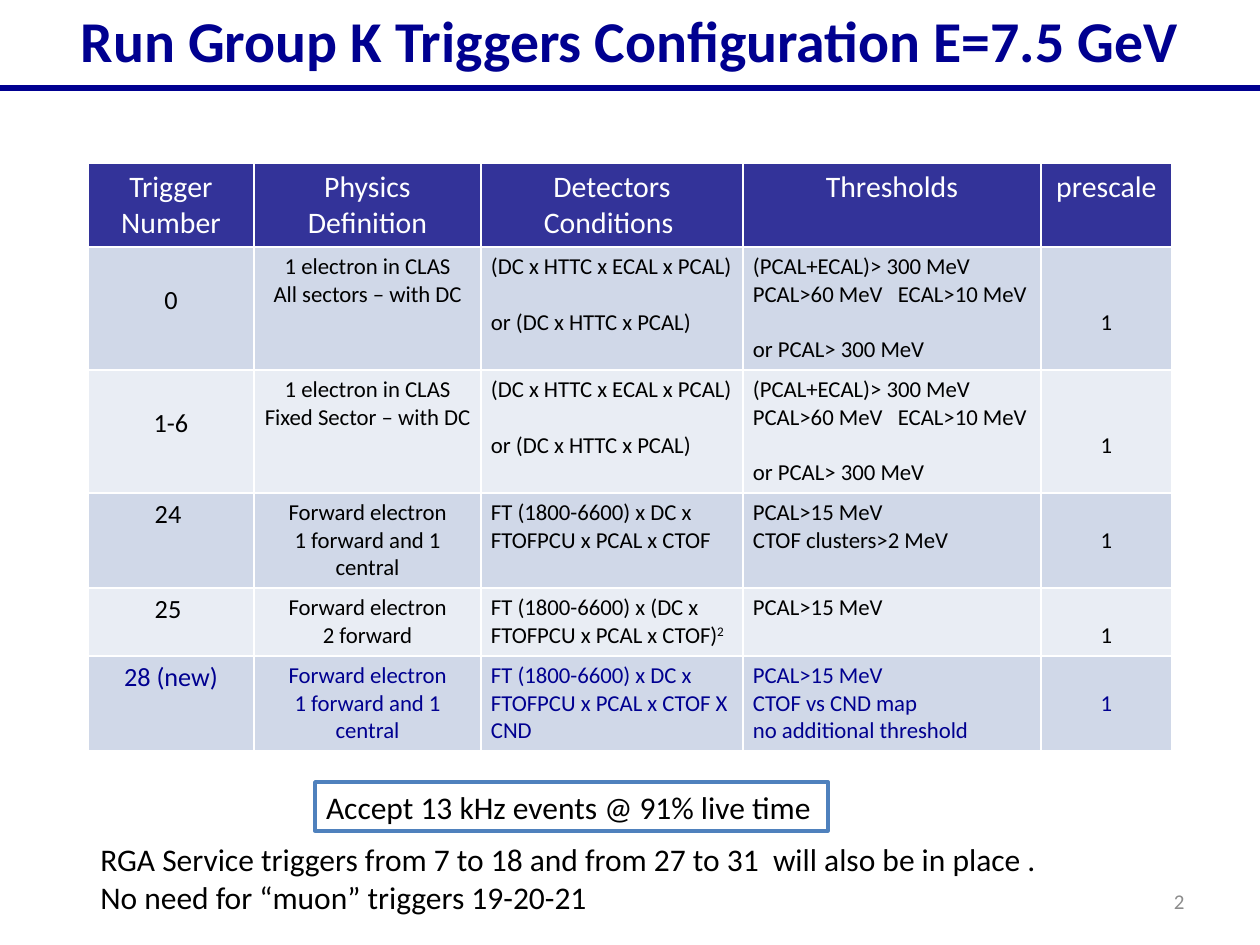
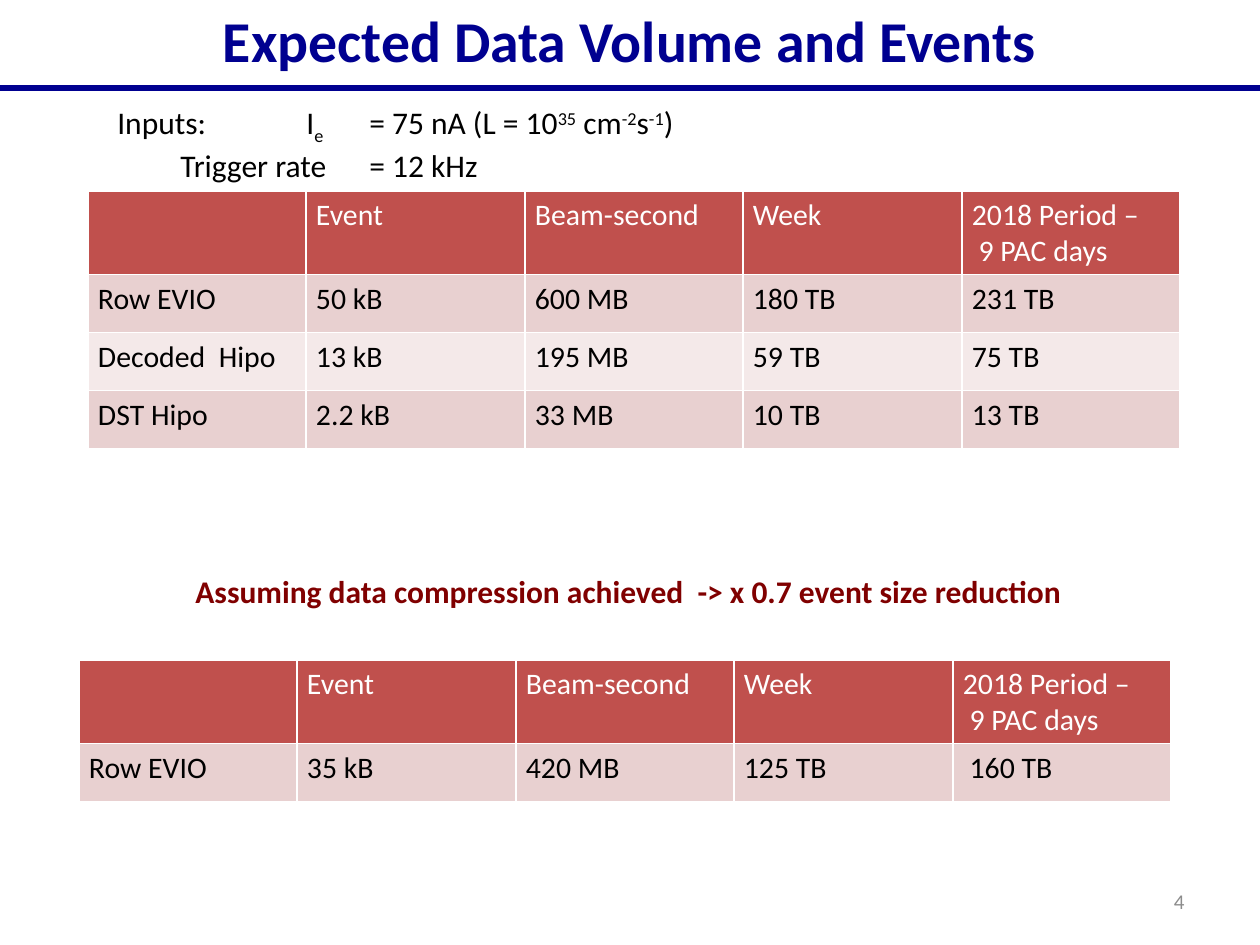
from dataclasses import dataclass
from typing import NamedTuple, Sequence, Union

from lxml.etree import SubElement
from pptx import Presentation
from pptx.dml.color import RGBColor
from pptx.enum.shapes import MSO_CONNECTOR, MSO_SHAPE
from pptx.enum.text import MSO_ANCHOR, MSO_AUTO_SIZE, PP_ALIGN
from pptx.oxml.ns import qn
from pptx.util import Emu, Pt

LEFT, MID, RIGHT = PP_ALIGN.LEFT, PP_ALIGN.CENTER, PP_ALIGN.RIGHT
SCALE = 914400 / 126
LINE = 1.22  # line height of the font, in ems


@dataclass(frozen=True)
class Theme:
    font: str = "Calibri"
    navy: str = "000090"
    black: str = "000000"
    white: str = "FFFFFF"
    grey: str = "8C8C8C"
    maroon: str = "800000"
    frame: str = "4F81BD"
    title: int = 33
    text: int = 18
    head: int = 17
    key: int = 15
    cell: int = 13
    page: int = 12


THEME = Theme()


class Box(NamedTuple):
    left: int
    top: int
    width: int
    height: int


class Style(NamedTuple):
    size: int
    color: str = THEME.black
    align: PP_ALIGN = LEFT
    bold: bool = False


class Piece(NamedTuple):
    text: str
    base: int = 0  # percent of raise (+) or drop (-)


Line = Union[str, Sequence[Piece]]


class Cell(NamedTuple):
    lines: Sequence[Line]
    style: Style
    lead: int = 0  # empty lines above the text
    split: bool = False  # one line of space before the last line


class Bands(NamedTuple):
    head: str
    odd: str
    even: str


class Trigger(NamedTuple):
    name: str
    physics: Sequence[str]
    logic: Sequence[Line]
    limits: Sequence[str]
    color: str = THEME.black
    tall: bool = False


BLUE = Bands("333399", "D0D8E8", "E9EDF4")
RED = Bands("C0504D", "E8D0D0", "F4E9E9")


def px(count: int) -> Emu:
    return Emu(round(count * SCALE))


def place(box: Box) -> list[Emu]:
    return [px(side) for side in box]


def rgb(color: str) -> RGBColor:
    return RGBColor.from_string(color)


def write(frame, lines: Sequence[Line], style: Style) -> None:
    """Fill a text frame with one paragraph per line."""
    for index, line in enumerate(lines):
        para = frame.add_paragraph() if index else frame.paragraphs[0]
        para.alignment = style.align
        if isinstance(line, str):
            para.text = line
        else:
            for piece in line:
                run = para.add_run()
                run.text = piece.text
                if piece.base:
                    run._r.get_or_add_rPr().set("baseline", str(piece.base * 1000))
        for run in para.runs:
            font = run.font
            font.name, font.size, font.bold = THEME.font, Pt(style.size), style.bold
            font.color.rgb = rgb(style.color)


def label(slide, box: Box, lines: Sequence[Line], style: Style):
    shape = slide.shapes.add_textbox(*place(box))
    shape.text_frame.word_wrap = True
    write(shape.text_frame, lines, style)
    return shape.text_frame


def start(deck, title: str, page: str):
    """Add a slide with its title, rule and page number."""
    slide = deck.slides.add_slide(deck.slide_layouts[5])
    rule = slide.shapes.add_connector(MSO_CONNECTOR.STRAIGHT, *place(Box(0, 88, 1260, 88)))
    rule.line.color.rgb = rgb(THEME.navy)
    rule.line.width = Pt(3)
    SubElement(rule._element.spPr, qn("a:effectLst"))

    head = slide.shapes.title
    head.left, head.top, head.width, head.height = place(Box(18, 0, 1223, 100))
    frame = head.text_frame
    frame.auto_size = MSO_AUTO_SIZE.NONE
    frame.vertical_anchor = MSO_ANCHOR.TOP
    frame.margin_top = px(5)
    write(frame, [title], Style(THEME.title, THEME.navy, MID, True))

    foot = label(slide, Box(903, 876, 294, 50), [page], Style(THEME.page, THEME.grey, RIGHT))
    foot.vertical_anchor = MSO_ANCHOR.MIDDLE
    return slide


def edge(cell) -> None:
    """Give a cell thin white borders, ahead of its fill."""
    props = cell._tc.get_or_add_tcPr()
    for index, side in enumerate(("lnL", "lnR", "lnT", "lnB")):
        line = SubElement(props, qn(f"a:{side}"), w=str(Pt(1)))
        fill = SubElement(line, qn("a:solidFill"))
        SubElement(fill, qn("a:srgbClr"), val=THEME.white)
        props.insert(index, line)


def grid(slide, spot: tuple[int, int], cols: Sequence[int], rows: Sequence[int],
         cells: Sequence[Sequence[Cell]], bands: Bands) -> None:
    box = Box(*spot, sum(cols), sum(rows))
    table = slide.shapes.add_table(len(rows), len(cols), *place(box)).table
    for col, width in zip(table.columns, cols):
        col.width = px(width)
    for row, height in zip(table.rows, rows):
        row.height = px(height)
    for y, line in enumerate(cells):
        shade = bands.head if y == 0 else bands.odd if y % 2 else bands.even
        for x, item in enumerate(line):
            cell = table.cell(y, x)
            edge(cell)
            cell.fill.solid()
            cell.fill.fore_color.rgb = rgb(shade)
            write(cell.text_frame, item.lines, item.style)
            space = Pt(item.style.size * LINE)
            cell.margin_left = cell.margin_right = px(10)
            cell.margin_top = px(6) + item.lead * space
            if item.split:
                cell.text_frame.paragraphs[-1].space_before = space


def heads(names: Sequence[Sequence[str]], align: PP_ALIGN) -> list[Cell]:
    return [Cell(name, Style(THEME.head, THEME.white, align)) for name in names]


def cells(trig: Trigger) -> list[Cell]:
    mid = Style(THEME.cell, trig.color, MID)
    side = Style(THEME.cell, trig.color)
    return [
        Cell([trig.name], Style(THEME.key, trig.color, MID), int(trig.tall)),
        Cell(trig.physics, mid),
        Cell(trig.logic, side, split=trig.tall),
        Cell(trig.limits, side, split=trig.tall),
        Cell(["1"], mid, 1 + trig.tall),
    ]


# Trigger table
TRIGHEADS = [["Trigger Number"], ["Physics", "Definition"],
             ["Detectors", "Conditions "], ["Thresholds"], ["prescale"]]
LOGIC = ["(DC x HTTC x ECAL x PCAL)", "or (DC x HTTC x PCAL)"]
LIMITS = ["(PCAL+ECAL)> 300 MeV", "PCAL>60 MeV   ECAL>10 MeV", "or PCAL> 300 MeV"]
PAIR = ["Forward electron", "1 forward and 1 central"]
TRIGGERS = [
    Trigger("0", ["1 electron in CLAS", "All sectors – with DC"], LOGIC, LIMITS, tall=True),
    Trigger("1-6", ["1 electron in CLAS", "Fixed Sector – with DC"], LOGIC, LIMITS, tall=True),
    Trigger("24 ", PAIR, ["FT (1800-6600) x DC x FTOFPCU x PCAL x CTOF"],
            ["PCAL>15 MeV", "CTOF clusters>2 MeV"]),
    Trigger("25 ", ["Forward electron", "2 forward"],
            [[Piece("FT (1800-6600) x (DC x FTOFPCU x PCAL x CTOF)"), Piece("2", 30)]],
            ["PCAL>15 MeV"]),
    Trigger("28 (new)", PAIR, ["FT (1800-6600) x DC x FTOFPCU x PCAL x CTOF X CND"],
            ["PCAL>15 MeV", "CTOF vs CND map", "no additional threshold"], THEME.navy),
]

# Data volume tables
SIZEHEADS = [[""], ["Event"], ["Beam-second"], ["Week"], ["2018 Period –", " 9 PAC days"]]
RAW = [
    ["Row EVIO", "50 kB", "600 MB", "180 TB", "231 TB"],
    ["Decoded  Hipo", "13 kB", "195 MB", "59 TB", "75 TB"],
    ["DST Hipo", "2.2 kB", "33 MB", "10 TB", "13 TB"],
]
PACKED = [["Row EVIO", "35 kB", "420 MB", "125 TB", " 160 TB"]]
INPUTS = [
    [Piece("Inputs:  \t\tI"), Piece("e  ", -25), Piece("\t= 75 nA (L = 10"), Piece("35", 30),
     Piece(" cm"), Piece("-2", 30), Piece("s"), Piece("-1", 30), Piece(")")],
    "\tTrigger rate\t= 12 kHz",
]


def sizes(slide, spot: tuple[int, int], data: Sequence[Sequence[str]]) -> None:
    body = [[Cell([value], Style(THEME.head)) for value in row] for row in data]
    grid(slide, spot, [218, 219, 218, 219, 218], [83] + [58] * len(data),
         [heads(SIZEHEADS, LEFT)] + body, RED)


def tabs(frame, step: int, count: int) -> None:
    """Set evenly spaced tab stops in every paragraph."""
    for para in frame.paragraphs:
        stops = SubElement(para._p.get_or_add_pPr(), qn("a:tabLst"))
        for index in range(1, count + 1):
            SubElement(stops, qn("a:tab"), pos=str(px(step * index)), algn="l")


def accept(slide, text: str) -> None:
    """Draw the framed rate statement."""
    shape = slide.shapes.add_shape(MSO_SHAPE.RECTANGLE, *place(Box(315, 782, 513, 49)))
    shape.shadow.inherit = False
    shape.fill.solid()
    shape.fill.fore_color.rgb = rgb(THEME.white)
    shape.line.color.rgb = rgb(THEME.frame)
    shape.line.width = Pt(2)
    frame = shape.text_frame
    frame.word_wrap = True
    frame.margin_left = frame.margin_right = px(11)
    frame.vertical_anchor = MSO_ANCHOR.TOP
    write(frame, [text], Style(THEME.text))


def main() -> None:
    deck = Presentation()
    deck.slide_width, deck.slide_height = px(1260), px(945)

    # Trigger configuration
    slide = start(deck, "Run Group K Triggers Configuration E=7.5 GeV", "2")
    grid(slide, (88, 163), [166, 227, 262, 298, 131], [84, 123, 123, 95, 68, 95],
         [heads(TRIGHEADS, MID)] + [cells(trig) for trig in TRIGGERS], BLUE)
    accept(slide, "Accept 13 kHz events @ 91% live time")
    label(slide, Box(88, 834, 971, 89), [
        "RGA Service triggers from 7 to 18 and from 27 to 31  will also be in place .",
        "No need for “muon” triggers 19-20-21",
    ], Style(THEME.text))

    # Data volume
    slide = start(deck, "Expected Data Volume and Events", "4")
    sizes(slide, (88, 191), RAW)
    tabs(label(slide, Box(105, 97, 592, 88), INPUTS, Style(THEME.text)), 63, 4)
    sizes(slide, (79, 660), PACKED)
    label(slide, Box(183, 566, 898, 49),
          ["Assuming data compression achieved  -> x 0.7 event size reduction"],
          Style(THEME.text, THEME.maroon, bold=True))

    deck.save("out.pptx")


if __name__ == "__main__":
    main()
